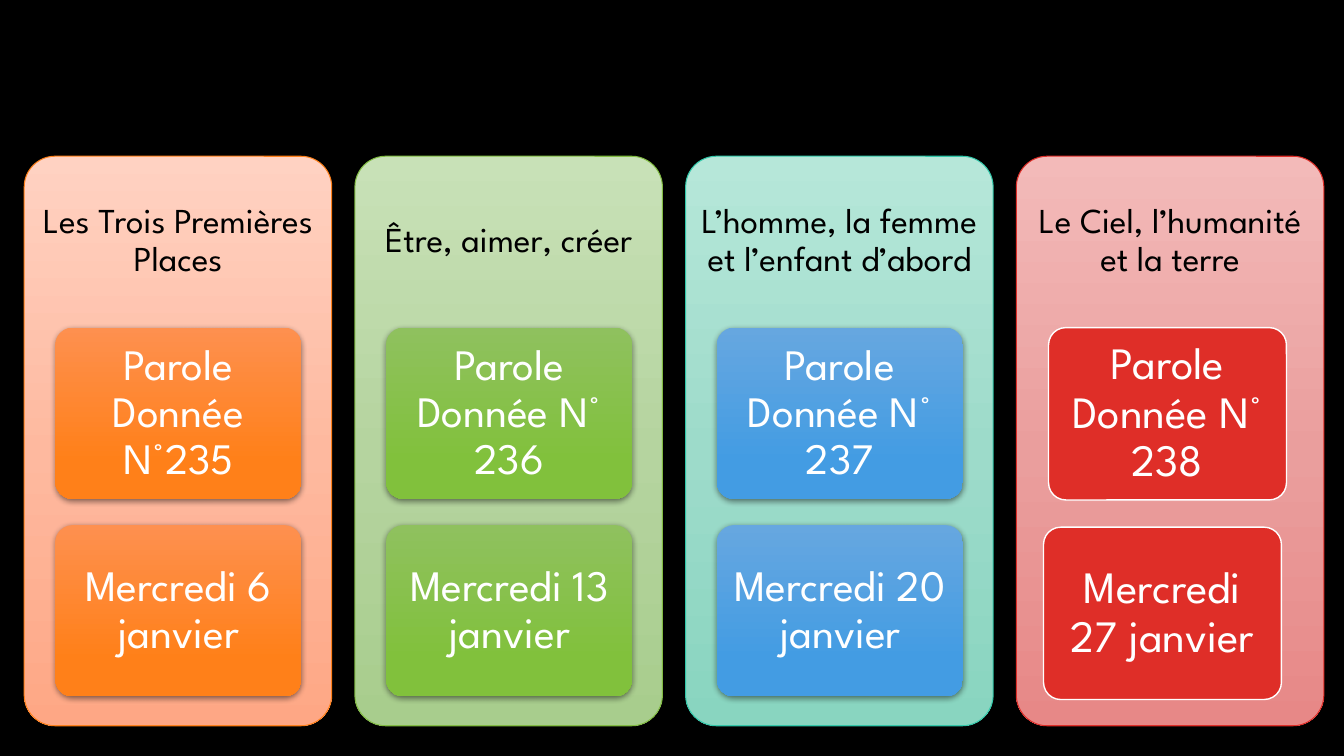
from lxml import etree
from pptx import Presentation
from pptx.dml.color import RGBColor
from pptx.enum.shapes import MSO_SHAPE
from pptx.enum.text import MSO_ANCHOR, PP_ALIGN
from pptx.oxml.ns import qn
from pptx.util import Inches, Pt

ROUNDED = MSO_SHAPE.ROUNDED_RECTANGLE
MIDDLE = MSO_ANCHOR.MIDDLE
CENTER = PP_ALIGN.CENTER

COLUMNS = [
    ("Les Trois Premières Places", ["Parole Donnée N°235", "Mercredi 6 janvier"],
     "FE801A", [(0, "FFD2C2"), (52, "FEB99F"), (100, "FEA785")],
     [(0, "FE904F"), (78, "FF8019")]),
    ("Être, aimer, créer", ["Parole Donnée N° 236", "Mercredi 13 janvier"],
     "81BB42", [(0, "C8E1B7"), (52, "B5D49F"), (100, "A8CD8D")],
     [(0, "8FC15E"), (78, "81C13C")]),
    ("L’homme, la femme et l’enfant d’abord", ["Parole Donnée N° 237", "Mercredi 20 janvier"],
     "32C7A9", [(0, "B6E7D9"), (52, "9DDBCA"), (100, "89D5C0")],
     [(0, "66A7E0"), (78, "439CE3")]),
    ("Le Ciel, l’humanité et la terre", ["Parole Donnée N° 238", "Mercredi 27 janvier"],
     "DF2E28", [(0, "F3BAB9"), (52, "EA9E9D"), (100, "E78887")], None),
]
CARD_PLACES = [(0.31, 3.25, 2.44, 1.7), (0.31, 5.21, 2.44, 1.7)]
OUTLINED_PLACES = [(0.32, 3.25, 2.36, 1.71), (0.27, 5.23, 2.36, 1.71)]


def add_panel(place, stops):
    panel = slide.shapes.add_shape(ROUNDED, *[Inches(length) for length in place])
    panel.adjustments[0] = 0.1
    panel.shadow.inherit = False
    if stops:
        panel.fill.gradient()
        panel.fill.gradient_angle = 270
        stop_list = panel._element.spPr.find(".//" + qn("a:gsLst"))
        stop_list.clear()
        for position, color in stops:
            stop = etree.SubElement(stop_list, qn("a:gs"), pos=str(position * 1000))
            etree.SubElement(stop, qn("a:srgbClr"), val=color)
    return panel


def write_text(box, text, size, color, side, edge):
    frame = box.text_frame
    frame.word_wrap = True
    frame.vertical_anchor = MIDDLE
    frame.margin_left = frame.margin_right = Inches(side)
    frame.margin_top = frame.margin_bottom = Inches(edge)
    para = frame.paragraphs[0]
    para.text = text
    para.alignment = CENTER
    para.line_spacing = 0.9
    para.font.name = "League Spartan"
    para.font.size = Pt(size)
    para.font.color.rgb = RGBColor.from_string(color)


deck = Presentation()
deck.slide_width = Inches(13.33)
deck.slide_height = Inches(7.5)
slide = deck.slides.add_slide(deck.slide_layouts[6])
slide.background.fill.solid()
slide.background.fill.fore_color.rgb = RGBColor.from_string("000000")

for index, (heading, labels, accent, panel_stops, card_stops) in enumerate(COLUMNS):
    left = 0.24 + 3.28 * index
    panel = add_panel((left, 1.55, 3.05, 5.65), panel_stops)
    panel.line.color.rgb = RGBColor.from_string(accent)
    panel.line.width = Pt(0.75)
    header = slide.shapes.add_textbox(Inches(left), Inches(1.55), Inches(3.05), Inches(1.69))
    write_text(header, heading, 25, "000000", 0.1, 0.1)

    places = CARD_PLACES if card_stops else OUTLINED_PLACES
    for label, (offset, top, width, height) in zip(labels, places):
        card = add_panel((left + offset, top, width, height), card_stops)
        if card_stops:
            card.line.fill.background()
            effects = card._element.spPr.find(qn("a:effectLst"))
            shadow = etree.SubElement(effects, qn("a:outerShdw"), blurRad=str(Pt(4.5)),
                                      dist=str(Pt(1.5)), dir="5400000", rotWithShape="0")
            shade = etree.SubElement(shadow, qn("a:srgbClr"), val="000000")
            etree.SubElement(shade, qn("a:alpha"), val="48000")
            write_text(card, label, 31, "FFFFFF", 0.09, 0.06)
        else:
            card.fill.solid()
            card.fill.fore_color.rgb = RGBColor.from_string(accent)
            card.line.color.rgb = RGBColor.from_string("FFFFFF")
            card.line.width = Pt(1)
            write_text(card, label, 32, "FFFFFF", 0.09, 0.07)

deck.save("out.pptx")
